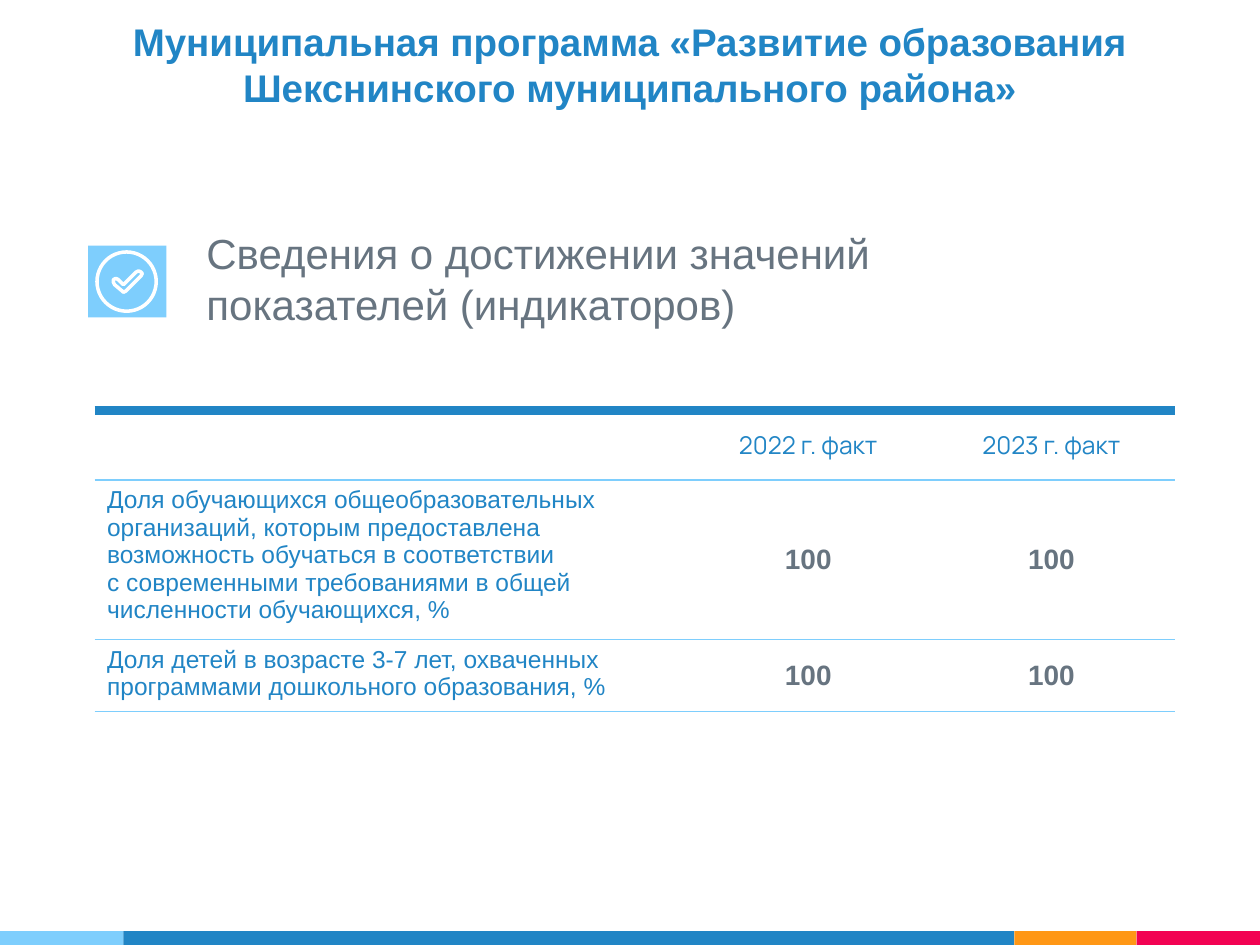
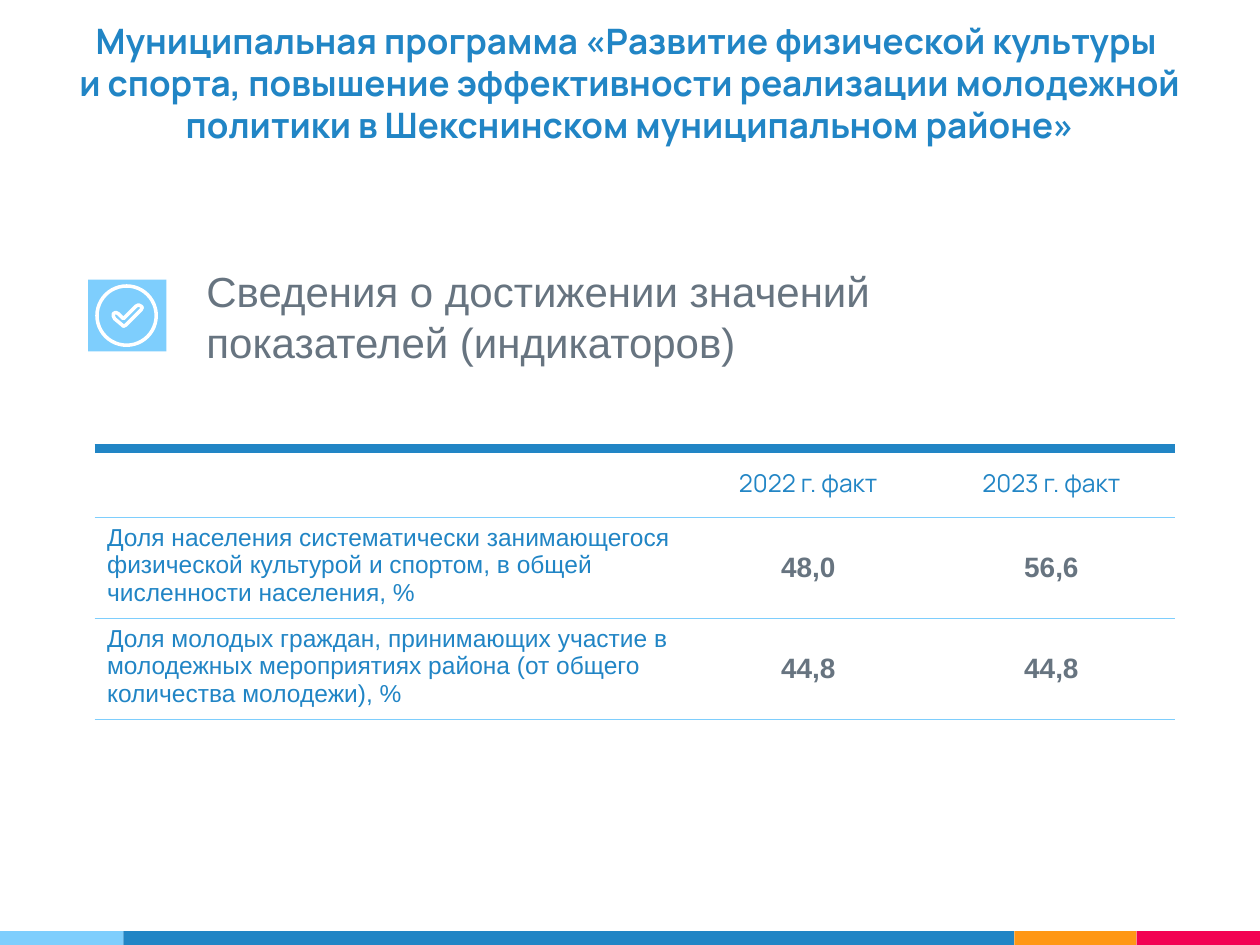
import pptx
import pptx.dml.color
import pptx.enum.shapes
import pptx.enum.text
import pptx.oxml
import pptx.oxml.ns
import pptx.util
from pptx.util import Inches

# Content
SUBTITLE = "Сведения о достижении значений показателей (индикаторов)"
YEARS = ("", "2022 г. факт", "2023 г. факт")
PROGRAMS = [
    {
        "title": "Муниципальная программа «Развитие образования "
                 "Шекснинского муниципального района»",
        "title_style": ("Arial", 22), "title_height": 1.02,
        "subtitle_top": 1.76, "icon_top": 1.95, "table_top": 3.26,
        "row_heights": (0.55, 1.19, 0.55),
        "indicators": [
            ("Доля обучающихся общеобразовательных организаций, которым предоставлена "
             "возможность обучаться в соответствии\n"
             "с современными требованиями в общей численности обучающихся, %", "100", "100"),
            ("Доля детей в возрасте 3-7 лет, охваченных программами "
             "дошкольного образования, %", "100", "100"),
        ],
    },
    {
        "title": "Муниципальная программа «Развитие физической культуры \v"
                 "и спорта, повышение эффективности реализации молодежной "
                 "политики в Шекснинском муниципальном районе»",
        "title_style": ("Manrope", 20), "title_height": 1.31,
        "subtitle_top": 2.06, "icon_top": 2.22, "table_top": 3.56,
        "row_heights": (0.55, 0.76, 0.76),
        "indicators": [
            ("Доля населения систематически занимающегося физической культурой "
             "и спортом, в общей численности населения, %", "48,0", "56,6"),
            ("Доля молодых граждан, принимающих участие в молодежных мероприятиях "
             "района (от общего количества молодежи), %", "44,8", "44,8"),
        ],
    },
]

# Shared look
BLUE, SKY, GREY, WHITE = "2185C5", "7ECEFD", "677480", "FFFFFF"
BAND = [(SKY, 0.98), (BLUE, 7.07), ("FF9715", 0.97), ("F20253", 0.98)]
BAND_TOP, BAND_HEIGHT = 7.39, 0.11
COLUMN_WIDTHS = (4.72, 1.89, 1.97)
# Check mark outline, relative to the icon square
CHECK = [(0.28, 0.37), (0.30, 0.36), (0.42, 0.24), (0.43, 0.22), (0.42, 0.21),
         (0.40, 0.20), (0.38, 0.21), (0.28, 0.31), (0.24, 0.27), (0.22, 0.26),
         (0.20, 0.27), (0.20, 0.29), (0.21, 0.31), (0.27, 0.36)]

CENTER = pptx.enum.text.PP_ALIGN.CENTER
MIDDLE = pptx.enum.text.MSO_ANCHOR.MIDDLE
SHAPES = pptx.enum.shapes.MSO_SHAPE


def color(hex_string):
    return pptx.dml.color.RGBColor.from_string(hex_string)


def write(frame, text, font, size, ink, bold=False, align=None, spacing=None):
    frame.text = text
    frame.word_wrap = True
    for paragraph in frame.paragraphs:
        paragraph.alignment = align
        paragraph.line_spacing = spacing
        for run in paragraph.runs:
            run.font.name, run.font.size, run.font.bold = font, pptx.util.Pt(size), bold
            run.font.color.rgb = color(ink)


def style(shape, fill=None, line=None):
    shape.shadow.inherit = False
    if fill:
        shape.fill.solid()
        shape.fill.fore_color.rgb = color(fill)
    else:
        shape.fill.background()
    if line:
        shape.line.color.rgb = color(line)
        shape.line.width = pptx.util.Pt(2)
    else:
        shape.line.fill.background()


def add_box(slide, kind, left, top, width, height, fill=None, line=None):
    box = slide.shapes.add_shape(
        kind, Inches(left), Inches(top), Inches(width), Inches(height))
    style(box, fill, line)


def add_band(slide):
    left = 0
    for fill, width in BAND:
        add_box(slide, SHAPES.RECTANGLE, left, BAND_TOP, width, BAND_HEIGHT, fill)
        left += width


def add_title(slide, program):
    title = slide.shapes.add_textbox(0, 0, Inches(10), Inches(program["title_height"]))
    frame = title.text_frame
    frame.margin_left = frame.margin_right = Inches(0.1)
    frame.margin_top = frame.margin_bottom = Inches(0.1)
    frame.vertical_anchor = MIDDLE
    write(frame, program["title"], *program["title_style"], BLUE, True, CENTER)


def add_check_icon(slide, top, left=0.7):
    add_box(slide, SHAPES.RECTANGLE, left, top, 0.62, 0.57, SKY)
    add_box(slide, SHAPES.OVAL, left + 0.07, top + 0.05, 0.47, 0.47, line=WHITE)
    points = [(Inches(left + x), Inches(top + y)) for x, y in CHECK]
    builder = slide.shapes.build_freeform(*points[0])
    builder.add_line_segments(points[1:], close=True)
    style(builder.convert_to_shape(), line=WHITE)


def set_borders(cell, top, bottom):
    properties = cell._tc.get_or_add_tcPr()
    sides = {"lnL": None, "lnR": None, "lnT": top, "lnB": bottom}
    for index, (side, border) in enumerate(sides.items()):
        hex_string, points = border or (None, 0)
        paint = (f'<a:solidFill><a:srgbClr val="{hex_string}"/></a:solidFill>'
                 if border else "<a:noFill/>")
        properties.insert(index, pptx.oxml.parse_xml(
            f'<a:{side} {pptx.oxml.ns.nsdecls("a")} w="{pptx.util.Pt(points)}">'
            f"{paint}</a:{side}>"))


def add_indicators(slide, program):
    rows = [YEARS] + program["indicators"]
    heights = program["row_heights"]
    table = slide.shapes.add_table(
        len(rows), len(YEARS), Inches(0.75), Inches(program["table_top"]),
        Inches(sum(COLUMN_WIDTHS)), Inches(sum(heights))).table
    table.first_row = table.horz_banding = False
    for column, width in zip(table.columns, COLUMN_WIDTHS):
        column.width = Inches(width)
    for r, (row, height) in enumerate(zip(rows, heights)):
        table.rows[r].height = Inches(height)
        for c, text in enumerate(row):
            cell = table.cell(r, c)
            cell.fill.background()
            set_borders(cell, (SKY, 0.75) if r else (BLUE, 6), (SKY, 0.75))
            if c or not r:
                cell.vertical_anchor = MIDDLE
            if r == 0:
                write(cell.text_frame, text, "Manrope", 14, BLUE, align=CENTER)
            elif c == 0:
                write(cell.text_frame, text, "Arial", 14, BLUE)
            else:
                write(cell.text_frame, text, "Arial", 16, GREY, True, CENTER)


def main():
    deck = pptx.Presentation()
    deck.slide_width, deck.slide_height = Inches(10), Inches(7.5)
    for program in PROGRAMS:
        slide = deck.slides.add_slide(deck.slide_layouts[6])
        add_band(slide)
        add_title(slide, program)
        add_indicators(slide, program)
        subtitle = slide.shapes.add_textbox(
            Inches(1.54), Inches(program["subtitle_top"]), Inches(6.04), Inches(0.91))
        write(subtitle.text_frame, SUBTITLE, "Arial", 24, GREY)
        add_check_icon(slide, program["icon_top"])
    deck.save("out.pptx")


if __name__ == "__main__":
    main()
